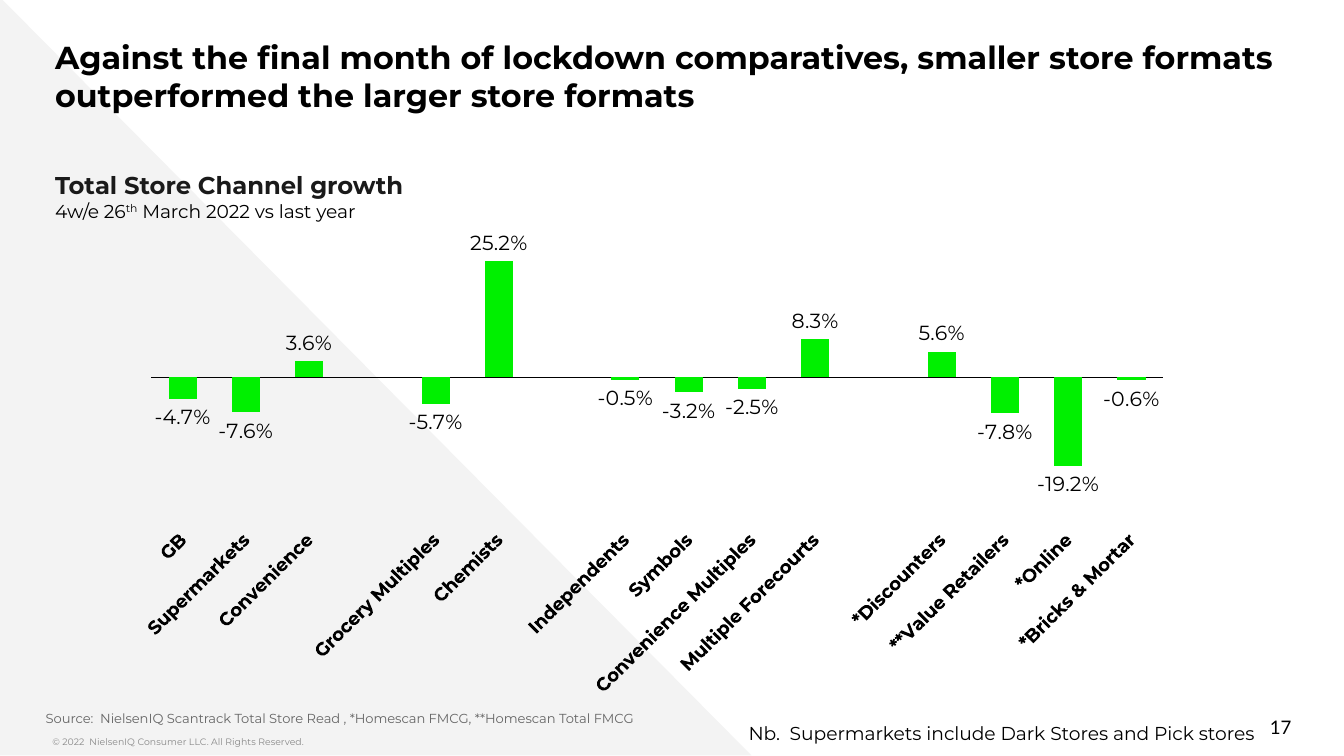
"""Build the slide on store channel growth."""
from lxml import etree
from pptx import Presentation
from pptx.chart.data import CategoryChartData as Data
from pptx.dml.color import RGBColor
from pptx.enum.chart import XL_CHART_TYPE as Kind, XL_LABEL_POSITION as Pos
from pptx.enum.chart import XL_TICK_LABEL_POSITION as Tick, XL_TICK_MARK as Mark
from pptx.enum.shapes import MSO_SHAPE as Form
from pptx.enum.text import MSO_ANCHOR as Anchor, MSO_AUTO_SIZE as Auto, PP_ALIGN as Align
from pptx.oxml.ns import qn
from pptx.util import Inches, Pt


def style(font, size, color="000000", bold=False, name="Montserrat"):
    """Apply size, colour, weight and face to a font."""
    look = {"size": Pt(size), "bold": bold, "name": name}
    for key, val in look.items():
        setattr(font, key, val)
    font.color.rgb = RGBColor.from_string(color)


def frame(box, pad, left=0, wrap=True, anchor=Anchor.TOP):
    """Set the insets of a box and return its first paragraph."""
    text = box.text_frame
    look = {
        "margin_left": Inches(left), "margin_right": Inches(left),
        "margin_top": Inches(pad), "margin_bottom": Inches(pad),
        "word_wrap": wrap, "vertical_anchor": anchor, "auto_size": Auto.NONE,
    }
    for key, val in look.items():
        setattr(text, key, val)
    return text.paragraphs[0]


deck = Presentation()
deck.slide_width = Inches(10)
deck.slide_height = deck.slide_width * 9 // 16
slide = deck.slides.add_slide(deck.slide_layouts[5])
shapes = slide.shapes

wedge = shapes.add_shape(Form.RIGHT_TRIANGLE, Inches(0), Inches(-0.02), Inches(5.59), Inches(5.64))
wedge.shadow.inherit = False
wedge.fill.solid()
wedge.fill.fore_color.rgb = RGBColor.from_string("F3F3F3")
wedge.line.fill.background()

title = shapes.title
wedge._element.addnext(title._element)
place = {"left": 0.41, "top": 0.18, "width": 9.53, "height": 0.41}
for key, val in place.items():
    setattr(title, key, Inches(val))
para = frame(title, 0.1)
para.alignment = Align.LEFT
run = para.add_run()
run.text = "Against the final month of lockdown comparatives, smaller store formats outperformed the larger store formats"
style(run.font, 17, bold=True)

head = shapes.add_textbox(Inches(0.41), Inches(1.22), Inches(4.16), Inches(0.49))
para = frame(head, 0.05)
para.space_after = Pt(12)
run = para.add_run()
run.text = "Total Store Channel growth"
style(run.font, 13, "1A1A1A", True)
para.add_line_break()
for part, base in (("4w/e 26", 0), ("th", 30000), (" March 2022 vs last year", 0)):
    run = para.add_run()
    run.text = part
    style(run.font, 10)
    if base:
        run._r.get_or_add_rPr().set("baseline", str(base))

bars = {
    "GB": -0.047, "Supermarkets": -0.076, "Convenience": 0.036, 1: None,
    "Grocery Multiples": -0.057, "Chemists": 0.252, 2: None,
    "Independents": -0.005, "Symbols": -0.032, "Convenience Multiples": -0.025,
    "Multiple Forecourts": 0.083, 3: None,
    "*Discounters": 0.056, "**Value Retailers": -0.078, "*Online": -0.192,
    "*Bricks & Mortar": -0.006,
}
data = Data(number_format="0.0%")
data.categories = [key if isinstance(key, str) else "" for key in bars]
data.add_series("Series 1", bars.values())
chart = shapes.add_chart(
    Kind.COLUMN_CLUSTERED, Inches(0.81), Inches(1.71), Inches(7.85), Inches(3.52), data
).chart
chart.has_legend = chart.has_title = False
style(chart.font, 10, name="Arial")

plot = chart.plots[0]
plot.gap_width = 125
plot.vary_by_categories = False
row = plot.series[0]
row.invert_if_negative = False
row.format.fill.solid()
row.format.fill.fore_color.rgb = RGBColor.from_string("00F000")
tags = row.data_labels
look = {"show_value": True, "position": Pos.OUTSIDE_END, "number_format": "0.0%",
        "number_format_is_linked": False}
for key, val in look.items():
    setattr(tags, key, val)
style(tags.font, 11)

axis = chart.category_axis
axis.tick_label_position = Tick.LOW
axis.major_tick_mark = axis.minor_tick_mark = Mark.NONE
style(axis.tick_labels.font, 10, bold=True)
axis.format.line.width = Pt(0.75)
axis.format.line.color.rgb = RGBColor.from_string("000000")
axis._element.find(qn("c:txPr")).find(qn("a:bodyPr")).set("rot", "-2700000")
scale = chart.value_axis
look = {"minimum_scale": -0.3, "maximum_scale": 0.3, "has_major_gridlines": False, "visible": False}
for key, val in look.items():
    setattr(scale, key, val)

area = chart._chartSpace.chart.plotArea
old = area.find(qn("c:layout"))
if old is not None:
    area.remove(old)
lay = etree.Element(qn("c:layout"))
area.insert(0, lay)
grid = etree.SubElement(lay, qn("c:manualLayout"))
rules = {"layoutTarget": "inner", "xMode": "edge", "yMode": "edge",
         "x": 0.04, "y": 0.01, "w": 0.96, "h": 0.59}
for key, val in rules.items():
    etree.SubElement(grid, qn("c:" + key)).set("val", str(val))

left, right, top, mid = Align.LEFT, Align.RIGHT, Anchor.TOP, Anchor.MIDDLE
notes = [
    ("Source:  NielsenIQ Scantrack Total Store Read , *Homescan FMCG, **Homescan Total FMCG",
     (0.34, 5.19, 8.76, 0.2), (0.1, 0, True, top), left, (7, "666666")),
    ("© 2022  NielsenIQ Consumer LLC. All Rights Reserved.",
     (0.39, 5.43, 5.54, 0.2), (0.05, 0, True, top), left, (5, "888888")),
    ("17", (7.36, 5.26, 2.25, 0.3), (0.05, 0, True, mid), right, (10, "000000", False, "Lato")),
    ("Nb.  Supermarkets include Dark Stores and Pick stores",
     (5.37, 5.32, 4.06, 0.27), (0.05, 0.1, False, top), right, (10,)),
]
for words, spot, pad, side, look in notes:
    box = shapes.add_textbox(*map(Inches, spot))
    para = frame(box, *pad)
    para.alignment = side
    run = para.add_run()
    run.text = words
    style(run.font, *look)

deck.save("out.pptx")
